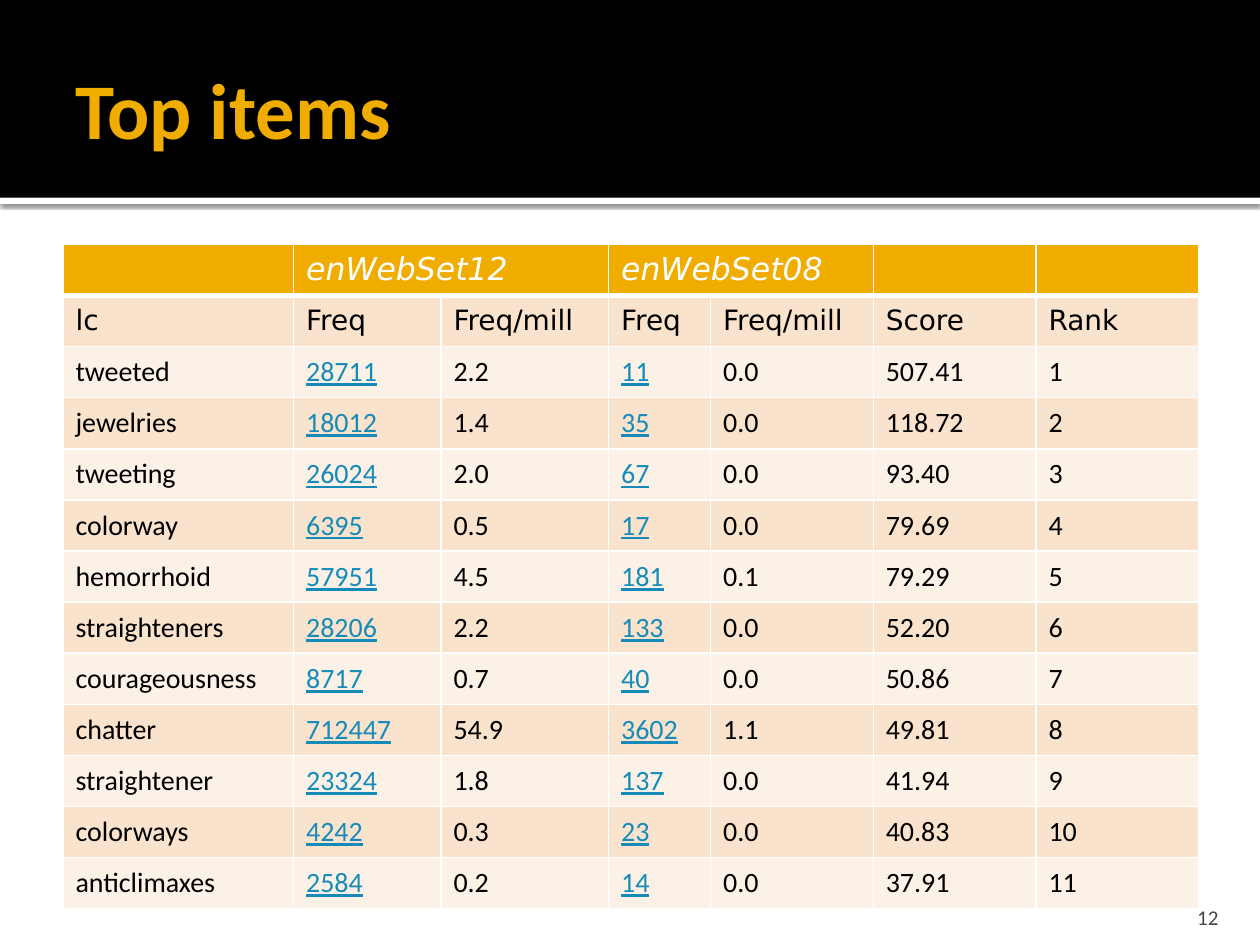
import pptx
import pptx.dml.color
import pptx.enum.shapes
import pptx.enum.text
import pptx.oxml
import pptx.oxml.ns
import pptx.util
import lxml.etree

Pt = pptx.util.Pt
ANCHOR = pptx.enum.text.MSO_ANCHOR
ALIGN = pptx.enum.text.PP_ALIGN
NAMESPACE = pptx.oxml.ns.nsdecls("a")

GOLD, WHITE, BLACK = "F0AD00", "FFFFFF", "000000"
LINK, GREY = "168BBA", "454545"
BANDS = ("F9E3CC", "FCF1E7")
BODY_FONT, HEADING_FONT = "Calibri", "DejaVu Sans"

COLUMN_WIDTHS = (131.8, 84.2, 95.8, 58.3, 93, 93, 93)
ROW_HEIGHT = 29.2
FREQUENCY_COLUMNS = (1, 3)
CORPORA = ("", "enWebSet12", "", "enWebSet08", "", "", "")
HEADINGS = ("lc", "Freq", "Freq/mill", "Freq", "Freq/mill", "Score", "Rank")
ITEMS = (
    ("tweeted", "28711", "2.2", "11", "0.0", "507.41"),
    ("jewelries", "18012", "1.4", "35", "0.0", "118.72"),
    ("tweeting", "26024", "2.0", "67", "0.0", "93.40"),
    ("colorway", "6395", "0.5", "17", "0.0", "79.69"),
    ("hemorrhoid", "57951", "4.5", "181", "0.1", "79.29"),
    ("straighteners", "28206", "2.2", "133", "0.0", "52.20"),
    ("courageousness", "8717", "0.7", "40", "0.0", "50.86"),
    ("chatter", "712447", "54.9", "3602", "1.1", "49.81"),
    ("straightener", "23324", "1.8", "137", "0.0", "41.94"),
    ("colorways", "4242", "0.3", "23", "0.0", "40.83"),
    ("anticlimaxes", "2584", "0.2", "14", "0.0", "37.91"),
)


def color(value):
    return pptx.dml.color.RGBColor.from_string(value)


class Deck:
    def __init__(self, width, height):
        self.presentation = pptx.Presentation()
        self.presentation.slide_width = Pt(width)
        self.presentation.slide_height = Pt(height)
        self.slide = self.presentation.slides.add_slide(self.presentation.slide_layouts[6])

    def run(self, paragraph, text, size, ink, font=BODY_FONT, bold=False, italic=False, underline=False):
        run = paragraph.add_run()
        run.text = text
        run.font.name = font
        run.font.size = Pt(size)
        run.font.bold = bold
        run.font.italic = italic
        run.font.underline = underline
        run.font.color.rgb = color(ink)

    def band(self, top, height, fill, shadow=False):
        band = self.slide.shapes.add_shape(
            pptx.enum.shapes.MSO_SHAPE.RECTANGLE, 0, Pt(top), self.presentation.slide_width, Pt(height))
        band.fill.solid()
        band.fill.fore_color.rgb = color(fill)
        band.line.fill.background()
        band.shadow.inherit = False
        if shadow:
            effects = band._element.spPr.find(pptx.oxml.ns.qn("a:effectLst"))
            effects.append(pptx.oxml.parse_xml(
                f'<a:outerShdw {NAMESPACE} blurRad="{Pt(2.5)}" dist="{Pt(0.8)}" dir="5400000" '
                f'algn="tl" rotWithShape="0"><a:srgbClr val="{BLACK}"><a:alpha val="60000"/>'
                '</a:srgbClr></a:outerShdw>'))

    def text(self, words, box, insets, anchor, align, size, ink, bold=False):
        frame = self.slide.shapes.add_textbox(*map(Pt, box)).text_frame
        frame.word_wrap = True
        frame.vertical_anchor = anchor
        frame.margin_left, frame.margin_top, frame.margin_right, frame.margin_bottom = map(Pt, insets)
        paragraph = frame.paragraphs[0]
        paragraph.alignment = align
        self.run(paragraph, words, size, ink, bold=bold)

    def table(self, left, top, widths, row_height, row_count):
        table = self.slide.shapes.add_table(
            row_count, len(widths), Pt(left), Pt(top), Pt(sum(widths)), Pt(row_height * row_count)).table
        table.first_row = table.horz_banding = False
        for column, width in zip(table.columns, widths):
            column.width = Pt(width)
        for row in table.rows:
            row.height = Pt(row_height)
        return table

    def cell(self, cell, words, fill, top_line=1, bottom_line=1, **style):
        properties = cell._tc.get_or_add_tcPr()
        for side, width in zip("LRTB", (1, 1, top_line, bottom_line)):
            properties.append(pptx.oxml.parse_xml(
                f'<a:ln{side} {NAMESPACE} w="{Pt(width)}"><a:solidFill>'
                f'<a:srgbClr val="{WHITE}"/></a:solidFill></a:ln{side}>'))
        cell.fill.solid()
        cell.fill.fore_color.rgb = color(fill)
        cell.vertical_anchor = ANCHOR.MIDDLE
        if words:
            self.run(cell.text_frame.paragraphs[0], words, **style)


def main():
    deck = Deck(720, 540)
    deck.band(113, 3.6, WHITE, shadow=True)
    deck.band(0, 113, BLACK)
    deck.text("Top items", (36, 12.2, 648, 98.6), (7.2, 3.6, 3.6, 3.6),
              ANCHOR.MIDDLE, ALIGN.LEFT, 45, GOLD, bold=True)

    ranked = [item + (str(rank),) for rank, item in enumerate(ITEMS, 1)]
    rows = [CORPORA, HEADINGS, *ranked]
    ranking = deck.table(36, 139.7, COLUMN_WIDTHS, ROW_HEIGHT, len(rows))
    for column in FREQUENCY_COLUMNS:
        ranking.cell(0, column).merge(ranking.cell(0, column + 1))

    for r, row in enumerate(rows):
        for c, words in enumerate(row):
            cell = ranking.cell(r, c)
            if r == 0:
                deck.cell(cell, words, GOLD, bottom_line=3,
                          size=18, ink=WHITE, font=HEADING_FONT, italic=True)
            elif r == 1:
                deck.cell(cell, words, BANDS[0], top_line=3, size=16, ink=BLACK, font=HEADING_FONT)
            else:
                linked = c in FREQUENCY_COLUMNS
                deck.cell(cell, words, BANDS[(r - 1) % 2], size=16,
                          ink=LINK if linked else BLACK, underline=linked)

    deck.text("12", (645.8, 509.8, 57.6, 21.6), (7.2, 3.6, 7.2, 0),
              ANCHOR.BOTTOM, ALIGN.RIGHT, 12, GREY)
    deck.presentation.save("out.pptx")


if __name__ == "__main__":
    main()
